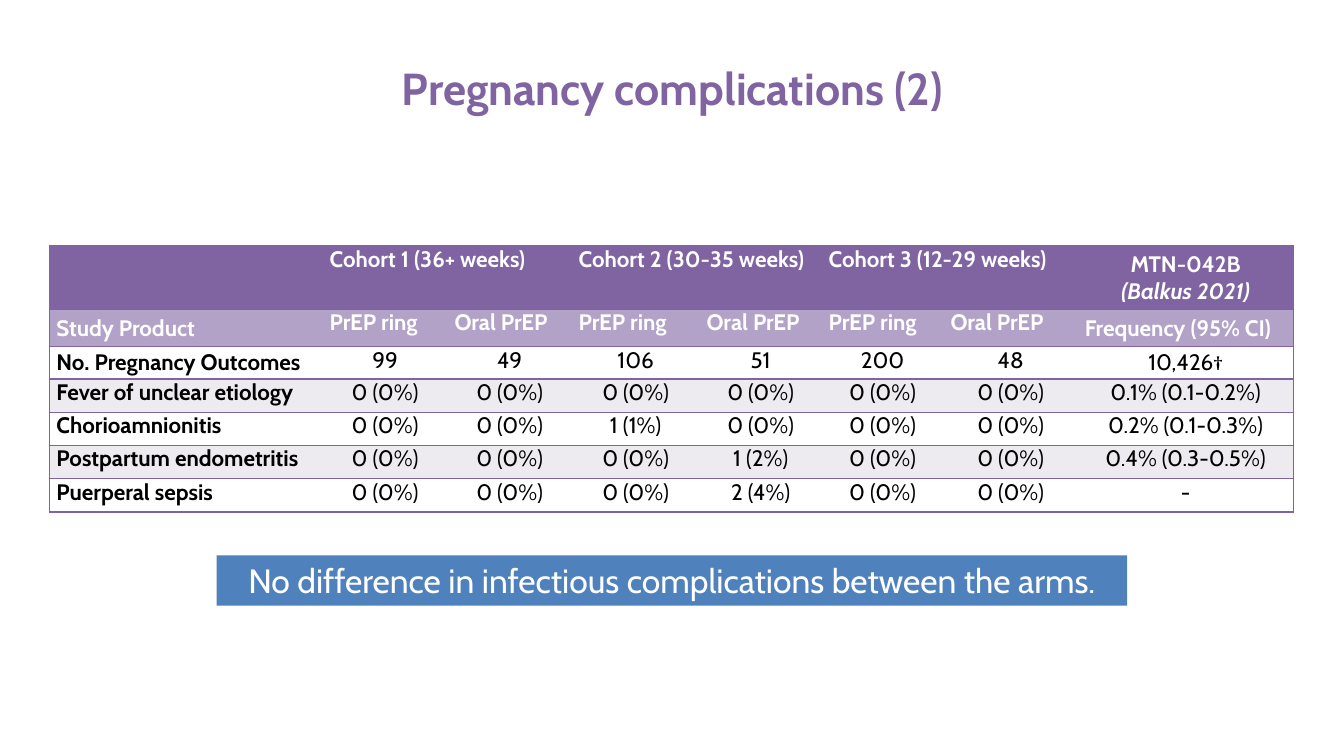
from dataclasses import dataclass

from lxml.etree import SubElement
from pptx import Presentation
from pptx.dml.color import RGBColor
from pptx.enum.shapes import MSO_SHAPE as Shape
from pptx.enum.text import MSO_ANCHOR as Anchor, MSO_AUTO_SIZE as AutoSize, PP_ALIGN as Align
from pptx.oxml.ns import qn
from pptx.util import Emu, Pt

PX = 9144
FONT = "Cabin"
COLORS = {
    "purple": "8064A2",
    "lilac": "B3A2C7",
    "band": "EDEAF0",
    "white": "FFFFFF",
    "black": "000000",
    "blue": "4F81BD",
}
COL_WIDTHS = [271, 124, 123, 127, 121, 121, 133, 214]
ROW_HEIGHTS = [63, 37, 32, 33, 33, 33, 33]
LAST_COL = len(COL_WIDTHS) - 1
NONE = "0 (0%)"


@dataclass
class Row:
    texts: list[str]
    fill: str
    header: bool = False
    middle_ends: bool = False


ROWS = [
    Row(["", "Cohort 1 (36+ weeks)", "", "Cohort 2 (30-35 weeks)", "",
         "Cohort 3 (12-29 weeks)", "", "MTN-042B\n(Balkus 2021)"], "purple", True, True),
    Row(["Study Product", *["PrEP ring", "Oral PrEP"] * 3, "Frequency (95% CI)"],
        "lilac", True, True),
    Row(["No. Pregnancy Outcomes", "99", "49", "106", "51", "200", "48", "10,426†"],
        "white", middle_ends=True),
    Row(["Fever of unclear etiology", *[NONE] * 6, "0.1% (0.1-0.2%)"], "band"),
    Row(["Chorioamnionitis", NONE, NONE, "1 (1%)", *[NONE] * 3, "0.2% (0.1-0.3%)"], "white"),
    Row(["Postpartum endometritis", *[NONE] * 3, "1 (2%)", *[NONE] * 2, "0.4% (0.3-0.5%)"],
        "band"),
    Row(["Puerperal sepsis", *[NONE] * 3, "2 (4%)", *[NONE] * 2, "-"], "white"),
]


def px(n: int) -> Emu:
    return Emu(n * PX)


def rgb(name: str) -> RGBColor:
    return RGBColor.from_string(COLORS[name])


def add_run(p, text: str, size: int, color: str, bold: bool = False, italic: bool = False) -> None:
    r = p.add_run()
    r.text = text
    r.font.name = FONT
    r.font.size = Pt(size)
    r.font.bold = bold
    r.font.italic = italic
    r.font.color.rgb = rgb(color)


def set_borders(cell, col: int) -> None:
    tc_pr = cell._tc.get_or_add_tcPr()
    shown = {"lnL": col == 0, "lnR": col == LAST_COL, "lnT": True, "lnB": True}
    for tag, visible in shown.items():
        ln = SubElement(tc_pr, qn(f"a:{tag}"), w=str(Pt(1)))
        if visible:
            fill = SubElement(ln, qn("a:solidFill"))
            SubElement(fill, qn("a:srgbClr"), val=COLORS["purple"])
        else:
            SubElement(ln, qn("a:noFill"))


def fill_cell(cell, row: Row, col: int) -> None:
    set_borders(cell, col)
    cell.fill.solid()
    cell.fill.fore_color.rgb = rgb(row.fill)
    cell.margin_left = cell.margin_right = px(7)
    cell.margin_top = cell.margin_bottom = 0
    at_end = col in (0, LAST_COL)
    cell.vertical_anchor = Anchor.MIDDLE if row.middle_ends and at_end else Anchor.TOP
    text = row.texts[col]
    if not text:
        return
    lines = text.split("\n")
    centred = len(lines) > 1 or (not row.header and col > 0)
    tf = cell.text_frame
    for i, line in enumerate(lines):
        p = tf.add_paragraph() if i else tf.paragraphs[0]
        p.alignment = Align.CENTER if centred else Align.LEFT
        add_run(p, line, 16, "white" if row.header else "black",
                bold=row.header or col == 0, italic=i > 0)


def add_title(s) -> None:
    tf = s.shapes.add_textbox(px(67), px(31), px(1200), px(125)).text_frame
    tf.word_wrap = True
    tf.vertical_anchor = Anchor.MIDDLE
    p = tf.paragraphs[0]
    p.alignment = Align.CENTER
    p.line_spacing = Pt(28.5)
    add_run(p, "Pregnancy complications (2)", 32, "purple", bold=True)


def add_complications(s) -> None:
    table = s.shapes.add_table(len(ROWS), len(COL_WIDTHS), px(49), px(244),
                               px(sum(COL_WIDTHS)), px(sum(ROW_HEIGHTS))).table
    for column, width in zip(table.columns, COL_WIDTHS):
        column.width = px(width)
    for i, (row, height) in enumerate(zip(ROWS, ROW_HEIGHTS)):
        table.rows[i].height = px(height)
        for col in range(len(COL_WIDTHS)):
            fill_cell(table.cell(i, col), row, col)
    for col in range(1, LAST_COL, 2):
        table.cell(0, col).merge(table.cell(0, col + 1))


def add_banner(s) -> None:
    sp = s.shapes.add_shape(Shape.RECTANGLE, px(215), px(551), px(903), px(50))
    sp.shadow.inherit = False
    sp.fill.solid()
    sp.fill.fore_color.rgb = rgb("blue")
    sp.line.fill.background()
    tf = sp.text_frame
    tf.word_wrap = True
    tf.auto_size = AutoSize.SHAPE_TO_FIT_TEXT
    tf.vertical_anchor = Anchor.TOP
    p = tf.paragraphs[0]
    p.alignment = Align.CENTER
    add_run(p, "No difference in infectious complications between the arms.", 24, "white")


def main() -> None:
    prs = Presentation()
    prs.slide_width, prs.slide_height = px(1333), px(750)
    s = prs.slides.add_slide(prs.slide_layouts[6])
    add_title(s)
    add_complications(s)
    add_banner(s)
    prs.save("out.pptx")


if __name__ == "__main__":
    main()
